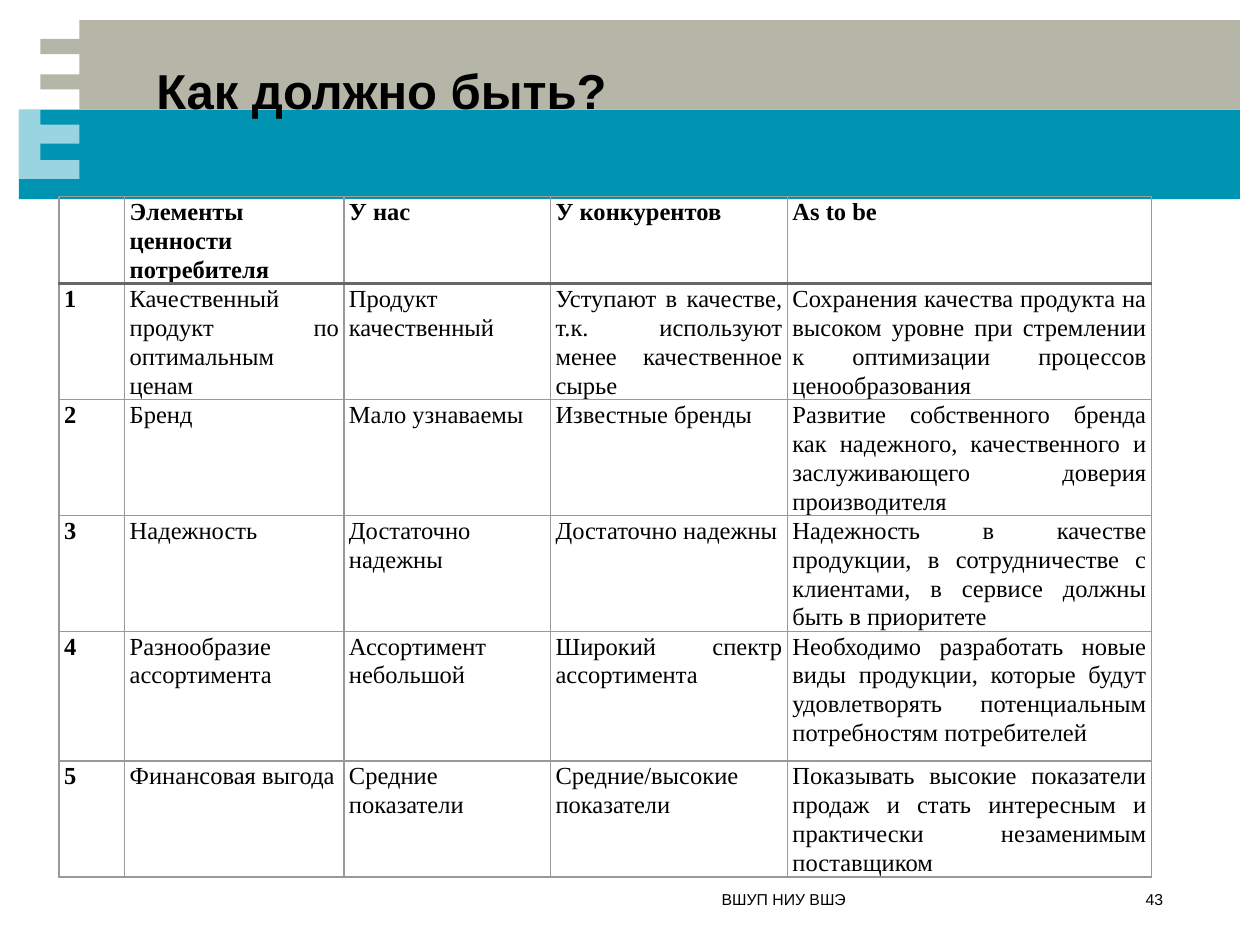
from dataclasses import dataclass

from lxml.etree import SubElement
from pptx import Presentation
from pptx.dml.color import RGBColor
from pptx.enum.shapes import MSO_SHAPE as Shape
from pptx.enum.text import MSO_ANCHOR as Anchor, MSO_AUTO_SIZE as AutoSize, PP_ALIGN as Align
from pptx.oxml.ns import qn
from pptx.util import Inches, Pt


@dataclass(frozen=True)
class Theme:
    teal: str = "0094B3"
    stone: str = "B5B5A8"
    white: str = "FFFFFF"
    ink: str = "000000"
    grid: str = "999999"
    header_rule: str = "666666"
    heading_font: str = "Arial"
    table_font: str = "Times New Roman"
    title_size: float = 28
    table_size: float = 14
    footer_size: float = 9


def write(frame, text, *, font, size, color, bold=False, align=Align.LEFT,
          anchor=Anchor.TOP, spacing=None):
    """Put one formatted paragraph into a text frame."""
    frame.word_wrap = True
    frame.vertical_anchor = anchor
    para = frame.paragraphs[0]
    para.alignment = align
    if spacing:
        para.line_spacing = spacing
    span = para.add_run()
    span.text = text
    span.font.name = font
    span.font.size = Pt(size)
    span.font.bold = bold
    span.font.color.rgb = RGBColor.from_string(color)


class SlideBuilder:
    def __init__(self, slide, theme):
        self.slide = slide
        self.theme = theme

    def paint(self, shape, color, opacity=100):
        shape.shadow.inherit = False
        shape.line.fill.background()
        shape.fill.solid()
        shape.fill.fore_color.rgb = RGBColor.from_string(color)
        if opacity < 100:
            tone = shape.fill._xPr.find(f".//{qn('a:srgbClr')}")
            SubElement(tone, qn("a:alpha"), val=str(opacity * 1000))

    def band(self, left, top, width, height, color):
        box = self.slide.shapes.add_shape(
            Shape.RECTANGLE, Inches(left), Inches(top), Inches(width), Inches(height))
        self.paint(box, color)

    def outline(self, points, color, opacity=100):
        start, *rest = [(Inches(x), Inches(y)) for x, y in points]
        builder = self.slide.shapes.build_freeform(*start)
        builder.add_line_segments(rest, close=True)
        self.paint(builder.convert_to_shape(), color, opacity)

    def title(self, text, left, top, width, height):
        box = self.slide.shapes.title
        box.left, box.top, box.width, box.height = map(Inches, (left, top, width, height))
        box.text_frame.auto_size = AutoSize.NONE
        write(box.text_frame, text, font=self.theme.heading_font,
              size=self.theme.title_size, color=self.theme.ink, bold=True)
        # Bring the title in front of the bands
        box._element.getparent().append(box._element)

    def footer(self, text, left, width):
        box = self.slide.shapes.add_textbox(
            Inches(left), Inches(7.06), Inches(width), Inches(0.15))
        write(box.text_frame, text, font=self.theme.heading_font,
              size=self.theme.footer_size, color=self.theme.ink,
              align=Align.RIGHT, anchor=Anchor.MIDDLE)

    def border(self, cell, side, color, width):
        line = SubElement(cell._tc.get_or_add_tcPr(), qn(f"a:ln{side}"), w=str(Pt(width)))
        fill = SubElement(line, qn("a:solidFill"))
        SubElement(fill, qn("a:srgbClr"), val=color)

    def cell(self, cell, text, row, column):
        cell.margin_left = cell.margin_right = Inches(0.04)
        cell.margin_top = cell.margin_bottom = 0
        heavy_side = {0: "B", 1: "T"}.get(row)
        for side in "LRTB":
            if side == heavy_side:
                self.border(cell, side, self.theme.header_rule, 1.5)
            else:
                self.border(cell, side, self.theme.grid, 1)
        cell.fill.background()
        if text:
            write(cell.text_frame, text, font=self.theme.table_font,
                  size=self.theme.table_size, color=self.theme.ink,
                  bold=row == 0 or column == 0, align=Align.JUSTIFY, spacing=1.07)

    def table(self, rows, left, top, widths, heights):
        table = self.slide.shapes.add_table(
            len(rows), len(widths), Inches(left), Inches(top),
            Inches(sum(widths)), Inches(sum(heights))).table
        table.first_row = table.horz_banding = False
        for column, width in zip(table.columns, widths):
            column.width = Inches(width)
        for line, height in zip(table.rows, heights):
            line.height = Inches(height)
        for r, texts in enumerate(rows):
            for c, text in enumerate(texts):
                self.cell(table.cell(r, c), text, r, c)


HEADER = ("", "Элементы ценности потребителя", "У нас", "У конкурентов", "As to be")
VALUES = [
    ("Качественный продукт по оптимальным ценам", "Продукт качественный",
     "Уступают в качестве, т.к. используют менее качественное сырье",
     "Сохранения качества продукта на высоком уровне при стремлении к оптимизации "
     "процессов ценообразования"),
    ("Бренд", "Мало узнаваемы", "Известные бренды",
     "Развитие собственного бренда как надежного, качественного и заслуживающего "
     "доверия производителя"),
    ("Надежность", "Достаточно надежны", "Достаточно надежны",
     "Надежность в качестве продукции, в сотрудничестве с клиентами, в сервисе "
     "должны быть в приоритете"),
    ("Разнообразие ассортимента", "Ассортимент небольшой", "Широкий спектр ассортимента",
     "Необходимо разработать новые виды продукции, которые будут удовлетворять "
     "потенциальным потребностям потребителей"),
    ("Финансовая выгода", "Средние показатели", "Средние/высокие показатели",
     "Показывать высокие показатели продаж и стать интересным и практически "
     "незаменимым поставщиком"),
]


def main():
    theme = Theme()
    deck = Presentation()
    deck.slide_width, deck.slide_height = Inches(10), Inches(7.5)
    page = SlideBuilder(deck.slides.add_slide(deck.slide_layouts[5]), theme)

    # Header bands with the toothed left edge
    page.band(0.15, 0.87, 9.69, 0.71, theme.teal)
    page.outline([(0.63, 0.16), (9.84, 0.16), (9.84, 0.87), (0.63, 0.87),
                  (0.63, 0.71), (0.32, 0.71), (0.32, 0.59), (0.63, 0.59),
                  (0.63, 0.43), (0.32, 0.43), (0.32, 0.31), (0.63, 0.31)], theme.stone)
    page.outline([(0.63, 1.42), (0.63, 1.27), (0.32, 1.27), (0.32, 1.14),
                  (0.63, 1.14), (0.63, 0.99), (0.32, 0.99), (0.32, 0.87),
                  (0.15, 0.87), (0.15, 1.42)], theme.white, opacity=60)
    page.title("Как должно быть?", 1.14, 0.43, 8.19, 1.05)

    # Comparison table, rows numbered from 1
    rows = [HEADER] + [(str(n), *texts) for n, texts in enumerate(VALUES, 1)]
    page.table(rows, 0.47, 1.56, widths=[0.52, 1.74, 1.64, 1.88, 2.89],
               heights=[0.34, 0.92, 0.92, 0.92, 1.03, 0.92])

    # Footer and page number
    page.footer("ВШУП НИУ ВШЭ", 1.14, 5.67)
    page.footer("43", 8.86, 0.47)

    deck.save("out.pptx")


if __name__ == "__main__":
    main()
